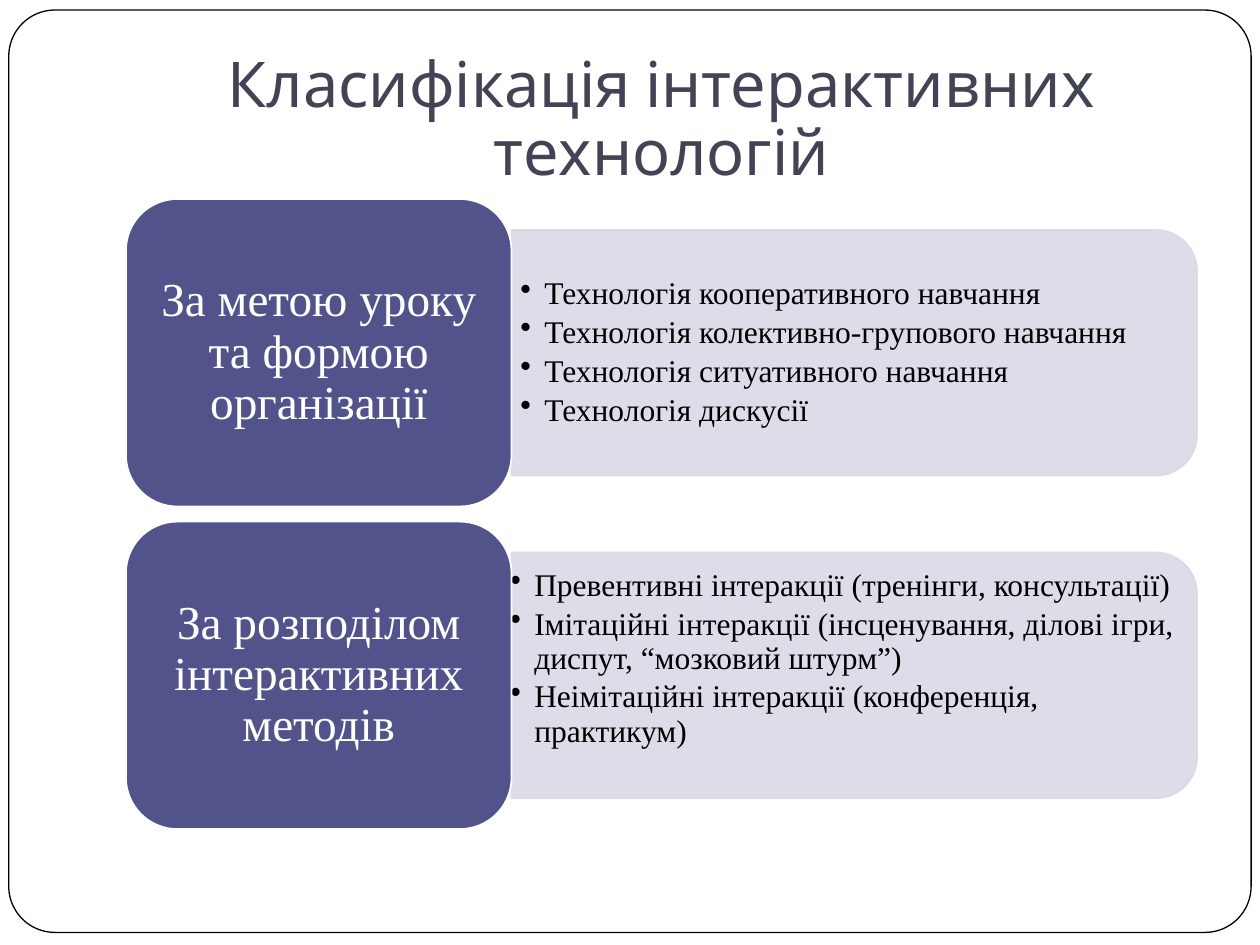
from lxml import etree
from pptx import Presentation
from pptx.dml.color import RGBColor
from pptx.enum.shapes import MSO_SHAPE
from pptx.enum.text import MSO_ANCHOR, PP_ALIGN
from pptx.oxml.ns import qn
from pptx.util import Inches, Pt

ROUND, ROUND_TOP = MSO_SHAPE.ROUNDED_RECTANGLE, MSO_SHAPE.ROUND_2_SAME_RECTANGLE
MIDDLE, BOTTOM = MSO_ANCHOR.MIDDLE, MSO_ANCHOR.BOTTOM
LEFT, CENTER = PP_ALIGN.LEFT, PP_ALIGN.CENTER

COLORS = {"white": "FFFFFF", "black": "000000", "title": "424456",
          "label": "52538A", "bar": "DADAE7"}
SERIF = "Times New Roman"

# Content
TITLE = "Класифікація інтерактивних технологій"
GROUPS = [
    {"label": "За метою уроку та формою організації",
     "items": ["Технологія кооперативного навчання",
               "Технологія колективно-групового навчання",
               "Технологія ситуативного навчання",
               "Технологія дискусії"],
     "list_box": (4.06, 0, 5.44)},  # left, shift from the bar's middle, width
    {"label": "За розподілом інтерактивних методів",
     "items": ["Превентивні інтеракції (тренінги, консультації)",
               "Імітаційні інтеракції (інсценування, ділові ігри, "
               "диспут, “мозковий штурм”)",
               "Неімітаційні інтеракції (конференція, практикум)"],
     "list_box": (3.98, -0.13, 5.59)},
]

# Layout, in inches
LABEL_X, LABEL_Y, LABEL_W, LABEL_H = 1, 1.58, 3.06, 2.44
ROW_STEP = 2.56
BAR_W, BAR_H = 5.44, 1.95

prs = Presentation()
prs.slide_width, prs.slide_height = Inches(10), Inches(7.5)
slide = prs.slides.add_slide(prs.slide_layouts[6])


def rgb(name):
    return RGBColor.from_string(COLORS[name])


def add_box(kind, x, y, w, h, fill, line, width, adjust):
    sp = slide.shapes.add_shape(kind, Inches(x), Inches(y), Inches(w), Inches(h))
    sp.shadow.inherit = False
    sp.fill.solid()
    sp.fill.fore_color.rgb = rgb(fill)
    sp.line.color.rgb = rgb(line)
    sp.line.width = Pt(width)
    for i, value in enumerate(adjust):
        sp.adjustments[i] = value
    return sp


def set_alpha(sp, percent):
    for color in sp._element.spPr.iter(qn("a:srgbClr")):
        etree.SubElement(color, qn("a:alpha"), val=str(percent * 1000))


def add_bullet(p, indent):
    pPr = p._p.get_or_add_pPr()
    pPr.set("marL", str(Inches(indent)))
    pPr.set("indent", str(-Inches(indent)))
    etree.SubElement(pPr, qn("a:buChar"), char="•")


def write(sp, lines, size=18, font=SERIF, color="black", align=LEFT,
          anchor=MIDDLE, insets=(0.07, 0.04, 0.07, 0.04), before=0, after=0,
          bullet=False):
    tf = sp.text_frame
    tf.word_wrap = True
    tf.vertical_anchor = anchor
    tf.margin_left, tf.margin_top, tf.margin_right, tf.margin_bottom = map(Inches, insets)
    for i, line in enumerate(lines):
        p = tf.add_paragraph() if i else tf.paragraphs[0]
        p.alignment = align
        p.line_spacing = 0.9
        p.space_before = Pt(before if i else 0)
        p.space_after = Pt(after if i == len(lines) - 1 else 0)
        if bullet:
            add_bullet(p, 0.19)
        r = p.add_run()
        r.text = line
        r.font.size, r.font.name = Pt(size), font
        r.font.color.rgb = rgb(color)


def add_text(x, y, w, h, lines, **fmt):
    tb = slide.shapes.add_textbox(Inches(x), Inches(y), Inches(w), Inches(h))
    write(tb, lines, **fmt)


# Frame and title
add_box(ROUND, 0.07, 0.08, 9.86, 7.32, "white", "black", 0.75, [0.05])
add_text(1, 0.3, 8.5, 1.25, [TITLE], size=36, font="Cabin", color="title",
         align=CENTER, anchor=BOTTOM, insets=(0.1, 0, 0.1, 0.05))

# Each row: bar, its list, then the label on top
for row, group in enumerate(GROUPS):
    top = LABEL_Y + row * ROW_STEP
    mid_y = top + LABEL_H / 2
    mid_x = LABEL_X + LABEL_W + BAR_W / 2

    bar = add_box(ROUND_TOP, mid_x - BAR_H / 2, mid_y - BAR_W / 2, BAR_H, BAR_W,
                  "bar", "bar", 1, [0.167, 0])
    bar.rotation = 90
    set_alpha(bar, 90)

    x, shift, w = group["list_box"]
    add_text(x, mid_y + shift - BAR_H / 2, w, BAR_H, group["items"],
             before=2.7, after=2.7, bullet=True)

    label = add_box(ROUND, LABEL_X, top, LABEL_W, LABEL_H, "label", "white", 1, [0.167])
    write(label, [group["label"]], size=27, color="white", align=CENTER,
          insets=(0.11, 0.06, 0.11, 0.06), after=9.4)

prs.save("out.pptx")
